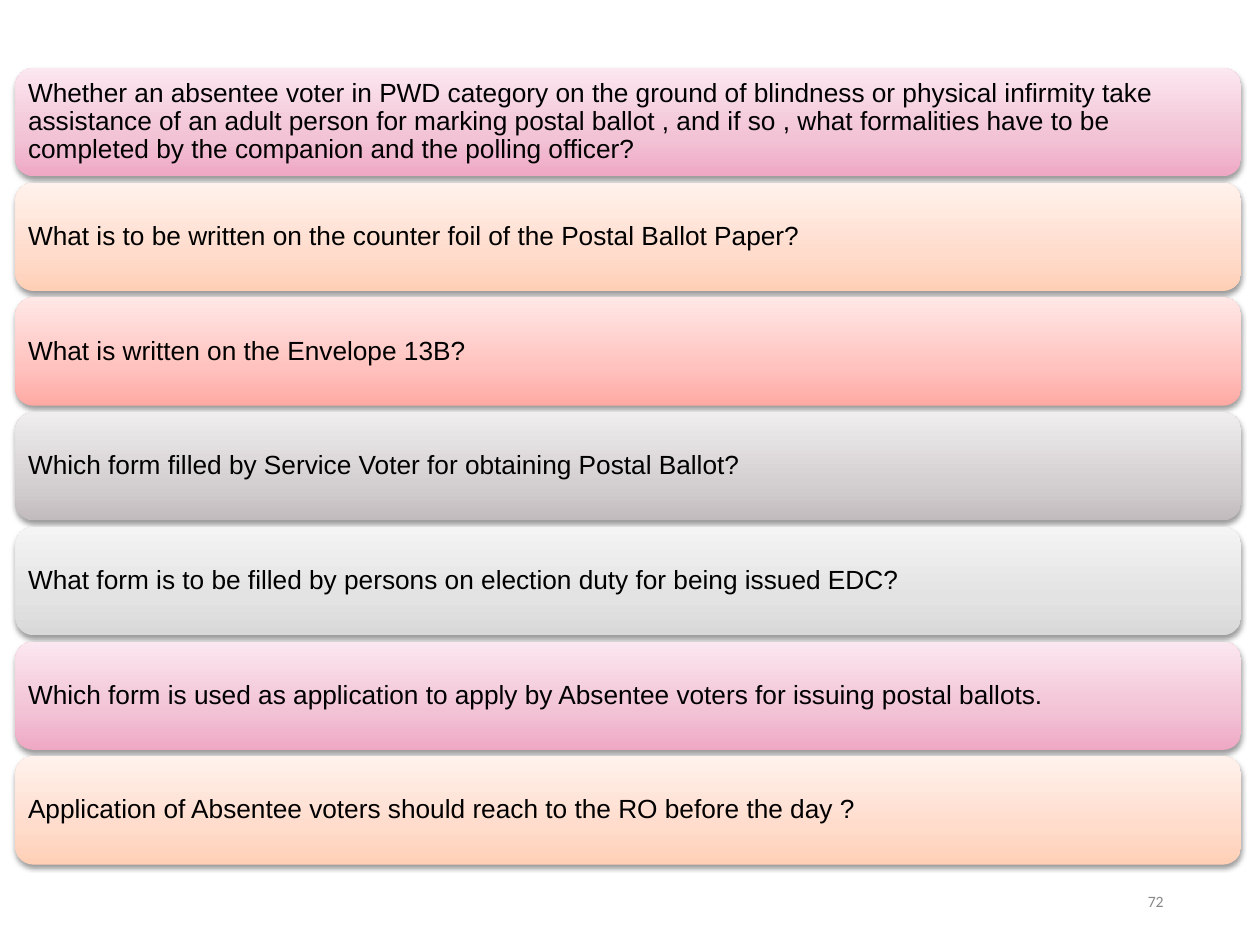
from copy import deepcopy
from itertools import cycle

from lxml import etree
from pptx import Presentation
from pptx.dml.color import RGBColor as RGB
from pptx.enum.shapes import MSO_SHAPE as Shape
from pptx.enum.text import MSO_ANCHOR as Anchor, PP_ALIGN as Align
from pptx.oxml.ns import qn
from pptx.util import Cm, Pt

BLACK = RGB(0x00, 0x00, 0x00)
GREY = RGB(0x88, 0x88, 0x88)

# Gradient colours from the bottom edge to the top edge
PINK = RGB(0xEF, 0xA8, 0xC4), RGB(0xF2, 0xC2, 0xD5), RGB(0xFB, 0xE7, 0xEF)
PEACH = RGB(0xFF, 0xCF, 0xB6), RGB(0xFF, 0xDC, 0xCC), RGB(0xFF, 0xF2, 0xEC)
CORAL = RGB(0xFF, 0xA9, 0xA3), RGB(0xFF, 0xC2, 0xBE), RGB(0xFF, 0xE8, 0xE6)
TAUPE = RGB(0xC2, 0xBB, 0xBD), RGB(0xD4, 0xD0, 0xD1), RGB(0xEF, 0xED, 0xEE)
SILVER = RGB(0xD8, 0xD8, 0xD8), RGB(0xE3, 0xE3, 0xE3), RGB(0xF4, 0xF4, 0xF4)
STOPS = 0, 0.35, 1

ITEMS = [
    "Whether an absentee voter in PWD category on the ground of blindness or "
    "physical infirmity take assistance of an adult person for marking postal "
    "ballot , and if so , what formalities have to be completed by the "
    "companion and the polling officer?",
    "What is to be written on the counter foil of the Postal Ballot Paper?",
    "What is written on the Envelope 13B?",
    "Which form filled by Service Voter for obtaining Postal Ballot?",
    "What form is to be filled by persons on election duty for being issued EDC?",
    "Which form is used as application to apply by Absentee voters for issuing "
    "postal ballots.",
    "Application of Absentee voters should reach to the RO before the day ?",
]


def write(shape, text, size, font, color, align=Align.LEFT, pad=(0.15, 0.15),
          lead=1.0):
    """Set the text of a shape; pad is the side and top inset in cm."""
    frame = shape.text_frame
    frame.word_wrap = True
    frame.vertical_anchor = Anchor.MIDDLE
    frame.margin_left = frame.margin_right = Cm(pad[0])
    frame.margin_top = frame.margin_bottom = Cm(pad[1])
    para = frame.paragraphs[0]
    para.alignment = align
    para.line_spacing = lead
    run = para.add_run()
    run.text = text
    run.font.size = Pt(size)
    run.font.name = font
    run.font.color.rgb = color


def shade(shape, tones):
    """Fill a shape with a three-stop gradient that runs upwards."""
    fill = shape.fill
    fill.gradient()
    fill.gradient_angle = 90
    stops = shape._element.spPr.find(qn("a:gradFill")).find(qn("a:gsLst"))
    stops.append(deepcopy(stops[0]))
    for stop, spot, tone in zip(fill.gradient_stops, STOPS, tones):
        stop.position = spot
        stop.color.rgb = tone


def cast(shape):
    """Give a shape a soft shadow straight below it."""
    shape.shadow.inherit = False
    effects = shape._element.spPr.find(qn("a:effectLst"))
    outer = etree.SubElement(effects, qn("a:outerShdw"), blurRad=str(Pt(3.1)),
                             dist=str(Pt(1.6)), dir="5400000", rotWithShape="0")
    color = etree.SubElement(outer, qn("a:srgbClr"), val=str(BLACK))
    etree.SubElement(color, qn("a:alpha"), val="38000")


def add_list(slide, left, top, width, height, gap=0.13):
    """Stack the questions as equal bars in the given box."""
    bar_h = (height - gap * (len(ITEMS) - 1)) / len(ITEMS)
    tones = cycle([PINK, PEACH, CORAL, TAUPE, SILVER])
    for i, (text, tone) in enumerate(zip(ITEMS, tones)):
        bar = slide.shapes.add_shape(
            Shape.ROUNDED_RECTANGLE, Cm(left), Cm(top + i * (bar_h + gap)),
            Cm(width), Cm(bar_h))
        bar.line.fill.background()
        shade(bar, tone)
        cast(bar)
        write(bar, text, 15, "Arial", BLACK, lead=0.9)


def add_number(slide, left, top, width, height):
    """Place the page number in the given box."""
    box = slide.shapes.add_textbox(Cm(left), Cm(top), Cm(width), Cm(height))
    write(box, "72", 9, "Calibri", GREY, align=Align.RIGHT, pad=(0.19, 0.1))


def main():
    deck = Presentation()
    deck.slide_width, deck.slide_height = Cm(25.4), Cm(19.05)
    slide = deck.slides.add_slide(deck.slide_layouts[6])
    add_list(slide, 0.31, 1.37, 24.71, 16.06)
    add_number(slide, 17.93, 17.65, 5.72, 1.02)
    deck.save("out.pptx")


if __name__ == "__main__":
    main()
